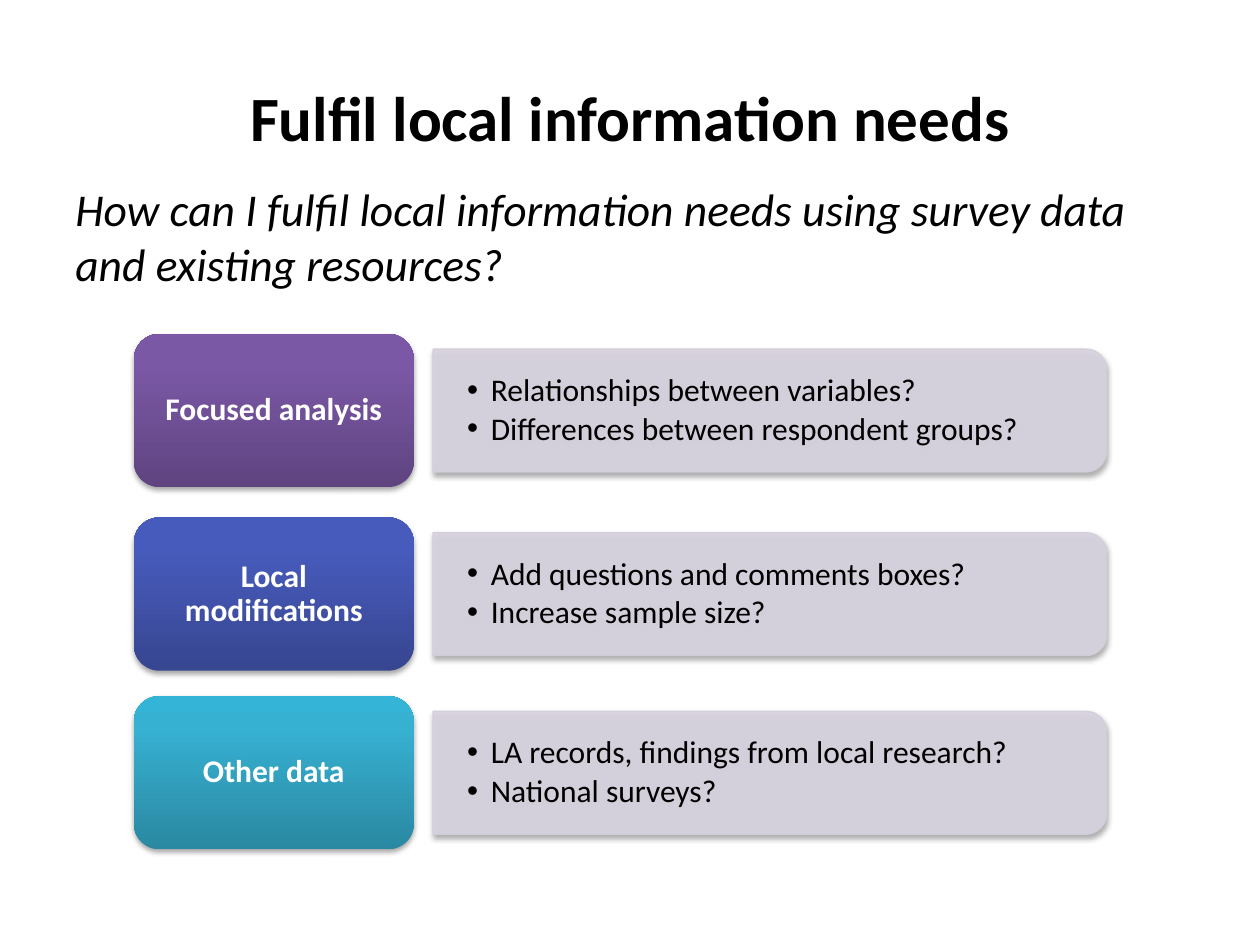
from copy import deepcopy
from dataclasses import dataclass
from math import cos, radians, sin

from lxml.etree import SubElement
from pptx import Presentation
from pptx.dml.color import RGBColor
from pptx.enum.shapes import MSO_SHAPE
from pptx.enum.text import MSO_ANCHOR, PP_ALIGN
from pptx.oxml.ns import qn
from pptx.util import Pt


@dataclass(frozen=True)
class Theme:
    font: str = "Calibri"
    text: str = "000000"
    label_text: str = "FFFFFF"
    card_fill: str = "D8D3E0"
    card_line: str = "D3CEDB"
    shadow: str = "000000"
    title_size: float = 36
    question_size: float = 26
    body_size: float = 18
    # Gradients run from the bottom edge to the top edge
    purple: tuple = ("5F4480", "7B58A6", "7C57A8")
    blue: tuple = ("374691", "475BBC", "455ABF")
    teal: tuple = ("2A88A2", "37B1D2", "34B4D6")


class SlideBuilder:
    def __init__(self, slide, theme):
        self.slide = slide
        self.theme = theme

    def add_run(self, paragraph, text, size, color, bold=False, italic=False):
        run = paragraph.add_run()
        run.text = text
        font = run.font
        font.name, font.size = self.theme.font, Pt(size)
        font.bold, font.italic = bold, italic
        font.color.rgb = RGBColor.from_string(color)

    def set_frame(self, shape, anchor, left, top, right, bottom):
        frame = shape.text_frame
        frame.word_wrap = True
        frame.vertical_anchor = anchor
        frame.margin_left, frame.margin_top = Pt(left), Pt(top)
        frame.margin_right, frame.margin_bottom = Pt(right), Pt(bottom)
        return frame

    def add_shadow(self, shape):
        shape.shadow.inherit = False
        effects = shape._element.spPr.find(qn("a:effectLst"))
        outer = SubElement(effects, qn("a:outerShdw"), blurRad=str(Pt(3.1)),
                           dist=str(Pt(1.8)), dir="5400000", rotWithShape="0")
        color = SubElement(outer, qn("a:srgbClr"), val=self.theme.shadow)
        SubElement(color, qn("a:alpha"), val="35000")

    def add_title(self, text, left, top, width, height):
        title = self.slide.shapes.title
        title.left, title.top = Pt(left), Pt(top)
        title.width, title.height = Pt(width), Pt(height)
        frame = self.set_frame(title, MSO_ANCHOR.MIDDLE, 7.2, 3.6, 7.2, 3.6)
        paragraph = frame.paragraphs[0]
        paragraph.alignment = PP_ALIGN.CENTER
        self.add_run(paragraph, text, self.theme.title_size, self.theme.text, bold=True)

    def add_question(self, text, left, top, width, height):
        box = self.slide.shapes.add_textbox(Pt(left), Pt(top), Pt(width), Pt(height))
        frame = self.set_frame(box, MSO_ANCHOR.TOP, 7.2, 3.6, 7.2, 3.6)
        paragraph = frame.paragraphs[0]
        paragraph.space_before = paragraph.space_after = Pt(12)
        self.add_run(paragraph, text, self.theme.question_size, self.theme.text, italic=True)

    def add_card(self, bullets, left, top, width, height, radius=11.7):
        # Square corners on the left, round corners on the right
        right, bottom = left + width, top + height
        corners = ((top + radius, -90), (bottom - radius, 0))
        points = [(right - radius + radius * cos(radians(start + step)),
                   center_y + radius * sin(radians(start + step)))
                  for center_y, start in corners for step in range(0, 91, 6)]
        points.append((left, bottom))
        builder = self.slide.shapes.build_freeform(Pt(left), Pt(top))
        builder.add_line_segments([(Pt(x), Pt(y)) for x, y in points], close=True)
        card = builder.convert_to_shape()

        card.fill.solid()
        card.fill.fore_color.rgb = RGBColor.from_string(self.theme.card_fill)
        card.line.color.rgb = RGBColor.from_string(self.theme.card_line)
        card.line.width = Pt(0.75)
        for color in card._element.spPr.iter(qn("a:srgbClr")):
            SubElement(color, qn("a:alpha"), val="90000")
        self.add_shadow(card)

        frame = self.set_frame(card, MSO_ANCHOR.MIDDLE, 19.5, 13, 23, 13)
        for index, text in enumerate(bullets):
            paragraph = frame.add_paragraph() if index else frame.paragraphs[0]
            self.add_bullet(paragraph, text)

    def add_bullet(self, paragraph, text):
        paragraph.alignment = PP_ALIGN.LEFT
        paragraph.level = 1
        paragraph.line_spacing = 0.9
        paragraph.space_after = Pt(2.7)
        properties = paragraph._p.get_or_add_pPr()
        properties.set("marL", str(Pt(13.5)))
        properties.set("indent", str(-Pt(13.5)))
        SubElement(properties, qn("a:buFont"), typeface="Arial")
        SubElement(properties, qn("a:buChar"), char="•")
        self.add_run(paragraph, text, self.theme.body_size, self.theme.text)

    def add_label(self, text, colors, left, top, width, height):
        label = self.slide.shapes.add_shape(
            MSO_SHAPE.ROUNDED_RECTANGLE, Pt(left), Pt(top), Pt(width), Pt(height))
        label.line.fill.background()
        label.fill.gradient()
        label.fill.gradient_angle = 90
        stop_list = label._element.spPr.find(".//" + qn("a:gsLst"))
        stop_list.append(deepcopy(stop_list[-1]))
        for stop, position, color in zip(label.fill.gradient_stops, (0, 0.8, 1), colors):
            stop.position = position
            stop.color.rgb = RGBColor.from_string(color)
        self.add_shadow(label)

        frame = self.set_frame(label, MSO_ANCHOR.MIDDLE, 9.6, 6.6, 9.6, 6.6)
        paragraph = frame.paragraphs[0]
        paragraph.alignment = PP_ALIGN.CENTER
        paragraph.line_spacing = 0.9
        self.add_run(paragraph, text, self.theme.body_size, self.theme.label_text, bold=True)


def main():
    presentation = Presentation()
    presentation.slide_width, presentation.slide_height = Pt(720), Pt(540)
    theme = Theme()
    slide = presentation.slides.add_slide(presentation.slide_layouts[5])
    builder = SlideBuilder(slide, theme)

    # Heading and question
    builder.add_title("Fulfil local information needs", 36, 21.6, 648, 90)
    builder.add_question("How can I fulfil local information needs using survey data "
                         "and existing resources?", 36, 100, 653, 402.5)

    # One row per approach: a coloured label beside a card of prompts
    rows = (
        (190.8, "Focused analysis", theme.purple,
         ("Relationships between variables?", "Differences between respondent groups?")),
        (295.7, "Local modifications", theme.blue,
         ("Add questions and comments boxes?", "Increase sample size?")),
        (397.8, "Other data", theme.teal,
         ("LA records, findings from local research?", "National surveys?")),
    )
    label_height, card_height = 87.6, 70.2
    card_offset = (label_height - card_height) / 2
    for top, label, colors, bullets in rows:
        builder.add_card(bullets, 247.5, top + card_offset, 384.8, card_height)
        builder.add_label(label, colors, 76.5, top, 160, label_height)

    presentation.save("out.pptx")


if __name__ == "__main__":
    main()
